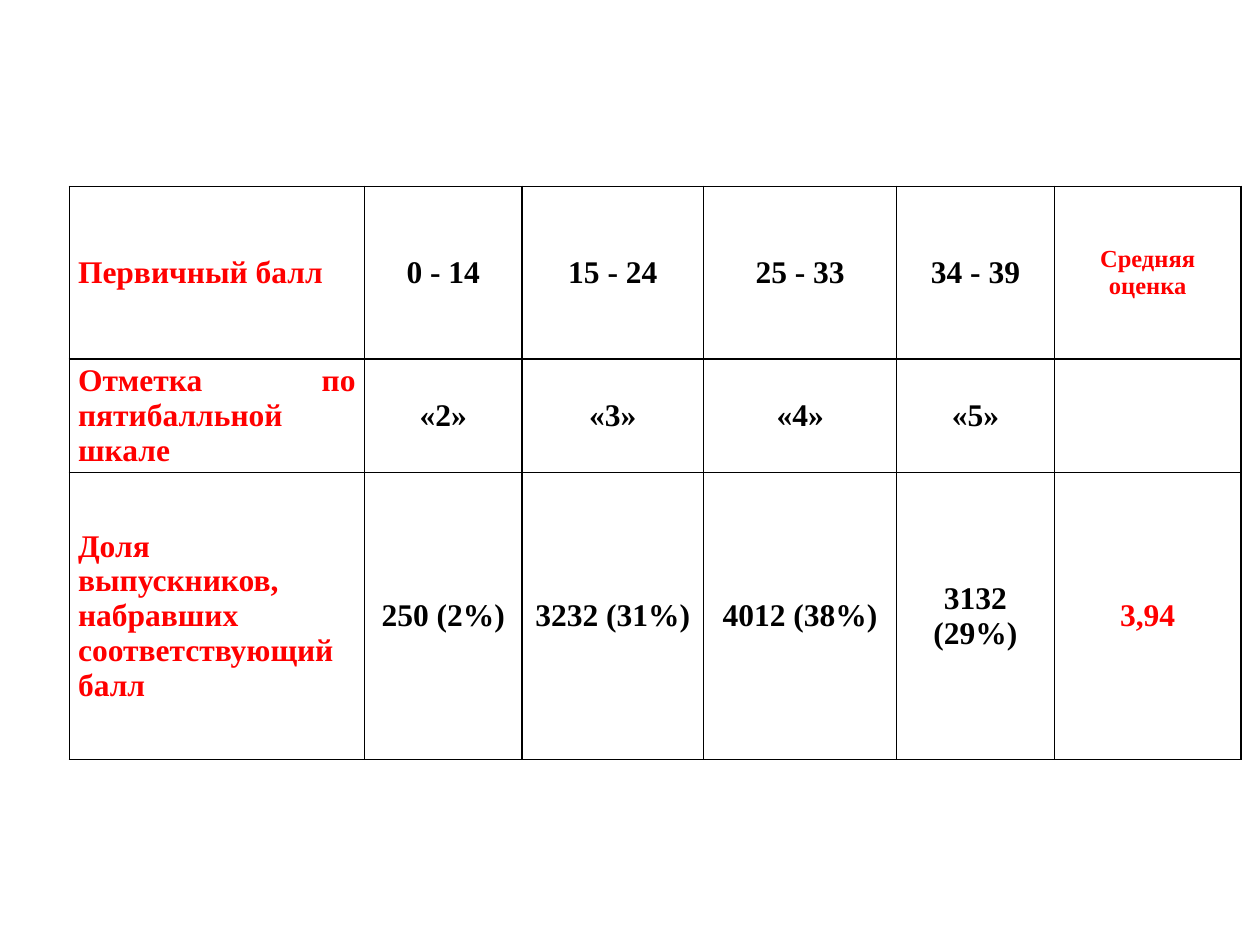
from lxml import etree
from pptx import Presentation, util as u
from pptx.dml.color import RGBColor
from pptx.enum import text
from pptx.oxml.ns import qn

BLACK = RGBColor(0x00, 0x00, 0x00)
RED = RGBColor(0xFF, 0x00, 0x00)
FONT = "Times New Roman"
COLUMNS = (2.34, 1.25, 1.44, 1.53, 1.25, 1.48)
ROWS = (1.37, 0.9, 2.28)
SCORES = (
    ("Первичный балл", "0 - 14", "15 - 24", "25 - 33", "34 - 39", "Средняя оценка"),
    ("Отметка по пятибалльной шкале", "«2»", "«3»", "«4»", "«5»", ""),
    ("Доля выпускников, набравших соответствующий балл",
     "250 (2%)", "3232 (31%)", "4012 (38%)", "3132 (29%)", "3,94"),
)


def set_borders(cell, color, width):
    """Draw a solid line on all four sides of a cell."""
    tcPr = cell._tc.get_or_add_tcPr()
    for i, side in enumerate(("a:lnL", "a:lnR", "a:lnT", "a:lnB")):
        ln = etree.Element(qn(side), w=str(width))
        fill = etree.SubElement(ln, qn("a:solidFill"))
        etree.SubElement(fill, qn("a:srgbClr"), val=str(color))
        tcPr.insert(i, ln)


def fill_cell(cell, wording, size, color, align):
    """Style one cell and write its wording."""
    cell.fill.background()
    set_borders(cell, BLACK, u.Pt(1))
    cell.vertical_anchor = text.MSO_ANCHOR.MIDDLE
    cell.margin_left = cell.margin_right = u.Inches(0.07)
    cell.margin_top = cell.margin_bottom = 0
    if not wording:
        return
    p = cell.text_frame.paragraphs[0]
    p.alignment = align
    r = p.add_run()
    r.text = wording
    r.font.name, r.font.size, r.font.bold = FONT, u.Pt(size), True
    r.font.color.rgb = color


def add_scores(s, x, y, w, h):
    """Place the table of exam scores in the given box."""
    table = s.shapes.add_table(len(ROWS), len(COLUMNS), x, y, w, h).table
    table.first_row = table.horz_banding = False
    for column, share in zip(table.columns, COLUMNS):
        column.width = int(w * share / sum(COLUMNS))
    for row, share in zip(table.rows, ROWS):
        row.height = int(h * share / sum(ROWS))
    last = len(COLUMNS) - 1
    for i, row in enumerate(SCORES):
        for j, wording in enumerate(row):
            size = 14 if (i, j) == (0, last) else 18
            color = RED if j in (0, last) else BLACK
            align = text.PP_ALIGN.CENTER if j else text.PP_ALIGN.JUSTIFY
            fill_cell(table.cell(i, j), wording, size, color, align)


def main():
    """Build the slide and save it."""
    prs = Presentation()
    prs.slide_width, prs.slide_height = u.Inches(10), u.Inches(7.5)
    s = prs.slides.add_slide(prs.slide_layouts[6])
    add_scores(s, u.Inches(0.55), u.Inches(1.48), u.Inches(9.3), u.Inches(4.55))
    prs.save("out.pptx")


if __name__ == "__main__":
    main()
